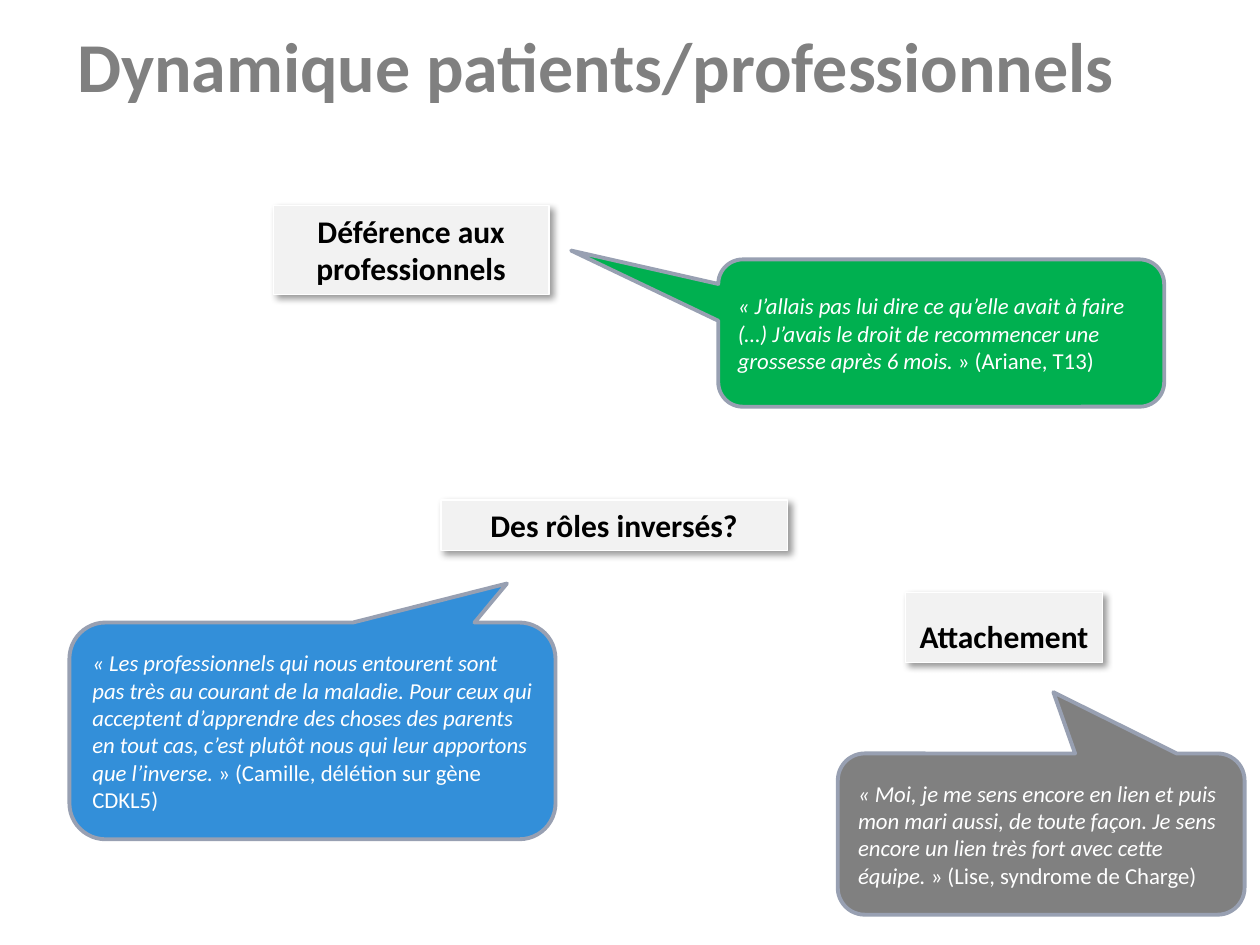
"""Build the slide on the dynamics between patients and professionals."""
from lxml import etree
from pptx import Presentation
from pptx.dml.color import RGBColor
from pptx.enum.shapes import MSO_SHAPE
from pptx.enum.text import MSO_ANCHOR, MSO_AUTO_SIZE, PP_ALIGN
from pptx.oxml import parse_xml
from pptx.util import Cm, Pt

RECTANGLE = MSO_SHAPE.RECTANGLE
CALLOUT = MSO_SHAPE.ROUNDED_RECTANGULAR_CALLOUT
TOP, MIDDLE = MSO_ANCHOR.TOP, MSO_ANCHOR.MIDDLE
LEFT, CENTER = PP_ALIGN.LEFT, PP_ALIGN.CENTER
NO_FIT, GROW = MSO_AUTO_SIZE.NONE, MSO_AUTO_SIZE.SHAPE_TO_FIT_TEXT
TITLE_ONLY = 5
FONT = "Calibri"
COLORS = {
    "white": "FFFFFF", "black": "000000", "light": "F2F2F2", "outline": "98A0B2",
    "green": "00B050", "blue": "338FD9", "gray": "808080",
}
DRAWING = "http://schemas.openxmlformats.org/drawingml/2006/main"
SHADOW = (
    f'<a:effectLst xmlns:a="{DRAWING}">'
    '<a:outerShdw blurRad="50800" dist="38100" dir="2700000" algn="tl" rotWithShape="0">'
    f'<a:srgbClr val="{COLORS["black"]}"><a:alpha val="40000"/></a:srgbClr>'
    "</a:outerShdw></a:effectLst>"
)

THEMES = [
    ("Des rôles inversés?", (8.89, 10.08, 6.98, 1.02), True, 1),
    ("Attachement", (18.26, 11.94, 3.96, 1.42), False, 1.5),
    ("Déférence aux professionnels", (5.51, 4.14, 5.56, 1.8), True, 1),
]
QUOTES = [
    ("« J’allais pas lui dire ce qu’elle avait à faire (…) J’avais le droit de "
     "recommencer une grossesse après 6 mois. ", "» (Ariane, T13)",
     (14.48, 5.23, 8.99, 2.97), (-0.83, -0.56), "green"),
    ("« Les professionnels qui nous entourent sont pas très au courant de la maladie. "
     "Pour ceux qui acceptent d’apprendre des choses des parents en tout cas, c’est "
     "plutôt nous qui leur apportons que l’inverse.",
     " » (Camille, délétion sur gène CDKL5)",
     (1.4, 12.55, 9.8, 4.37), (0.4, -0.68), "blue"),
    ("« Moi, je me sens encore en lien et puis mon mari aussi, de toute façon. Je sens "
     "encore un lien très fort avec cette équipe. ", "» (Lise, syndrome de Charge)",
     (16.89, 15.19, 8.2, 3.25), (0.03, -0.88), "gray"),
]


class SlideBuilder:
    """Hold the style and the current slide."""

    def __init__(self, slide):
        self.slide = slide

    def color(self, name):
        return RGBColor.from_string(COLORS[name])

    def format_run(self, run, size, color, bold=False, italic=False):
        run.font.name = FONT
        run.font.size = Pt(size)
        run.font.bold = bold
        run.font.italic = italic
        run.font.color.rgb = self.color(color)

    def add_box(self, kind, place, fill, line, line_width):
        shape = self.slide.shapes.add_shape(kind, *map(Cm, place))
        shape.shadow.inherit = False
        shape.fill.solid()
        shape.fill.fore_color.rgb = self.color(fill)
        shape.line.color.rgb = self.color(line)
        shape.line.width = Pt(line_width)
        return shape

    def set_title(self, text, place):
        title = self.slide.shapes.title
        title.left, title.top, title.width, title.height = map(Cm, place)
        frame = title.text_frame
        frame.text = text
        frame.word_wrap = True
        frame.auto_size = NO_FIT
        frame.vertical_anchor = TOP
        paragraph = frame.paragraphs[0]
        paragraph.alignment = LEFT
        self.format_run(paragraph.runs[0], 40, "gray", bold=True)

    def add_theme(self, text, place, wrap, spacing):
        shape = self.add_box(RECTANGLE, place, "light", "white", 0.75)
        properties = shape.fill._xPr
        properties.remove(properties.find(etree.QName(DRAWING, "effectLst")))
        properties.append(parse_xml(SHADOW))
        frame = shape.text_frame
        frame.text = text
        frame.word_wrap = wrap
        frame.auto_size = GROW
        frame.vertical_anchor = TOP
        paragraph = frame.paragraphs[0]
        paragraph.alignment = CENTER
        paragraph.line_spacing = float(spacing)
        self.format_run(paragraph.runs[0], 18, "black", bold=True)

    def add_quote(self, quote, speaker, place, pointer, fill):
        shape = self.add_box(CALLOUT, place, fill, "outline", 2.22)
        shape.adjustments[0], shape.adjustments[1] = pointer
        frame = shape.text_frame
        frame.word_wrap = True
        frame.vertical_anchor = MIDDLE
        paragraph = frame.paragraphs[0]
        paragraph.alignment = LEFT
        for text, italic in ((quote, True), (speaker, False)):
            run = paragraph.add_run()
            run.text = text
            self.format_run(run, 13, "white", italic=italic)


def main():
    presentation = Presentation()
    presentation.slide_width, presentation.slide_height = Cm(25.4), Cm(19.05)
    slide = presentation.slides.add_slide(presentation.slide_layouts[TITLE_ONLY])
    builder = SlideBuilder(slide)
    builder.set_title("Dynamique patients/professionnels", (1.3, 0.33, 24.1, 3.18))
    for theme in THEMES:
        builder.add_theme(*theme)
    for quote in QUOTES:
        builder.add_quote(*quote)
    presentation.save("out.pptx")


if __name__ == "__main__":
    main()
